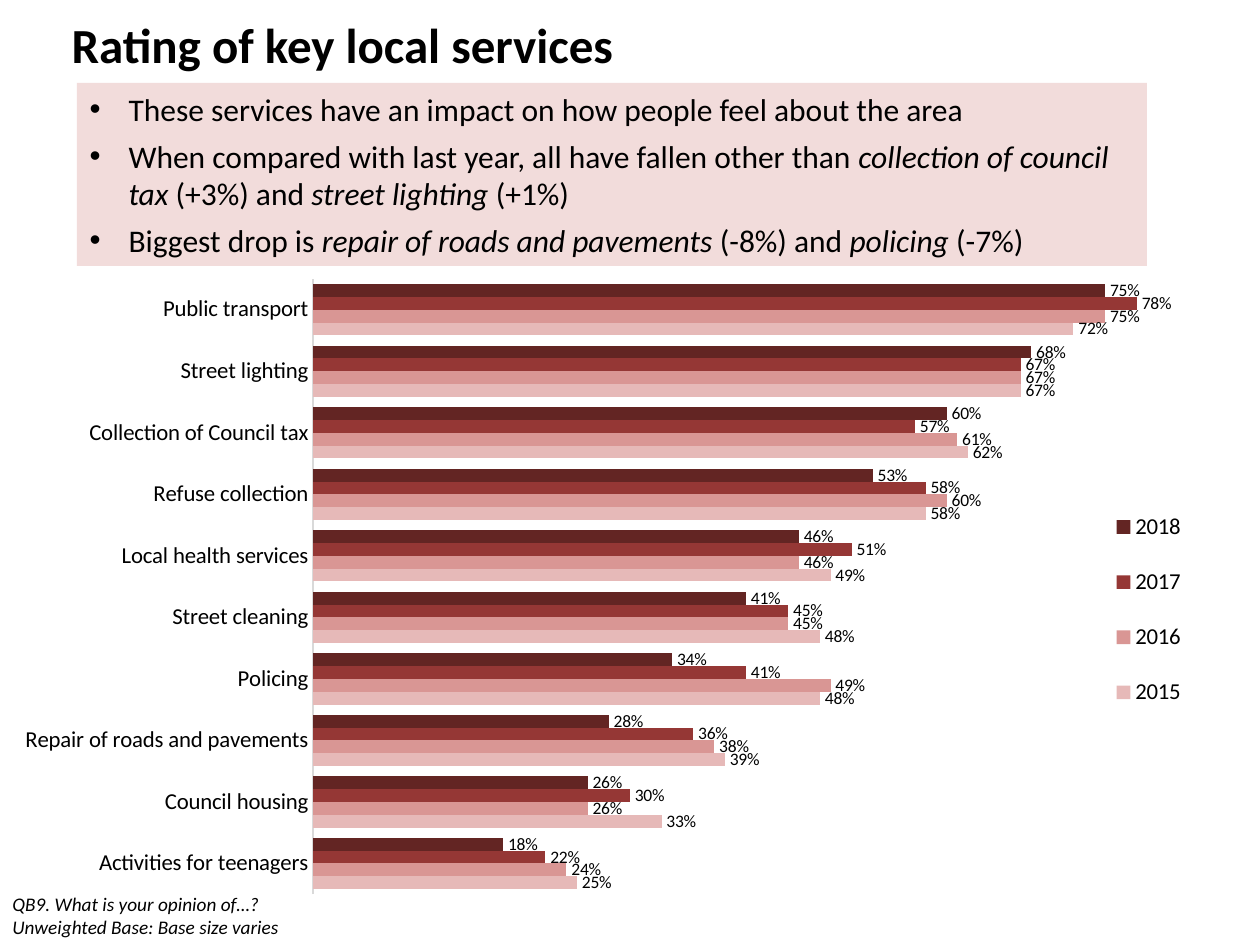
import pptx
import pptx.chart.data
import pptx.dml.color
import pptx.enum.chart
import pptx.enum.text
import pptx.oxml
import pptx.util
from pptx.oxml.ns import qn

RGB = pptx.dml.color.RGBColor
BLACK = RGB(0, 0, 0)
PINK = RGB(0xF2, 0xDC, 0xDB)
GREY = RGB(0xD9, 0xD9, 0xD9)
SCALE = 914400 / 126
FACE = "Calibri"

# Odd parts of each point are italic
POINTS = [
    ["These services have an impact on how people feel about the area"],
    ["When compared with last year, all have fallen other than ",
     "collection of council tax", " (+3%) and ", "street lighting", " (+1%)"],
    ["Biggest drop is ", "repair of roads and pavements",
     " (-8%) and ", "policing", " (-7%)"],
]
CATS = ["Activities for teenagers", "Council housing",
        "Repair of roads and pavements", "Policing", "Street cleaning",
        "Local health services", "Refuse collection",
        "Collection of Council tax", "Street lighting", "Public transport"]
SERIES = [
    ("2015", RGB(0xE6, 0xB9, 0xB8), [25, 33, 39, 48, 48, 49, 58, 62, 67, 72]),
    ("2016", RGB(0xD9, 0x96, 0x94), [24, 26, 38, 49, 45, 46, 60, 61, 67, 75]),
    ("2017", RGB(0x95, 0x37, 0x35), [22, 30, 36, 41, 45, 51, 58, 57, 67, 78]),
    ("2018", RGB(0x63, 0x25, 0x23), [18, 26, 28, 34, 41, 46, 53, 60, 68, 75]),
]


def px(num):
    return pptx.util.Emu(round(num * SCALE))


def place(shape, *box):
    shape.left, shape.top, shape.width, shape.height = map(px, box)


def style(font, size, bold=False, italic=False, face=FACE):
    font.name, font.size = face, pptx.util.Pt(size)
    font.bold, font.italic = bold, italic
    font.color.rgb = BLACK


def add_title(slide):
    title = slide.shapes.title
    place(title, 59, 4, 1090, 79)
    frame = title.text_frame
    frame.text = "Rating of key local services"
    frame.auto_size = pptx.enum.text.MSO_AUTO_SIZE.NONE
    frame.vertical_anchor = pptx.enum.text.MSO_ANCHOR.MIDDLE
    para = frame.paragraphs[0]
    para.alignment = pptx.enum.text.PP_ALIGN.LEFT
    style(para.runs[0].font, 28, bold=True)


def add_points(slide):
    body = slide.placeholders[1]
    place(body, 77, 83, 1070, 183)
    body.fill.solid()
    body.fill.fore_color.rgb = PINK
    frame = body.text_frame
    frame.auto_size = pptx.enum.text.MSO_AUTO_SIZE.NONE
    frame.vertical_anchor = pptx.enum.text.MSO_ANCHOR.MIDDLE
    for num, parts in enumerate(POINTS):
        para = frame.add_paragraph() if num else frame.paragraphs[0]
        props = para._p.get_or_add_pPr()
        props.set("marL", str(px(39)))
        props.set("indent", str(-px(39)))
        para.space_before = pptx.util.Pt(5 if num else 0)
        for spot, part in enumerate(parts):
            run = para.add_run()
            run.text = part
            style(run.font, 18, italic=spot % 2 == 1)


def add_note(slide):
    frame = slide.shapes.add_textbox(
        px(0), px(886), px(905), px(59)).text_frame
    frame.word_wrap = True
    frame.text = ("QB9. What is your opinion of…?\n"
                  "Unweighted Base: Base size varies")
    for para in frame.paragraphs:
        style(para.runs[0].font, 11, italic=True)


def set_layout(node, spots, inner=False):
    """Fix the place of a plot area or legend as shares of the chart."""
    old = node.find(qn("c:layout"))
    if old is not None:
        node.remove(old)
    target = '<c:layoutTarget val="inner"/>' if inner else ""
    modes = "".join(f'<c:{key}Mode val="edge"/>' for key in "xy")
    vals = "".join(f'<c:{key} val="{val}"/>' for key, val in zip("xywh", spots))
    layout = pptx.oxml.parse_xml(
        '<c:layout xmlns:c="http://schemas.openxmlformats.org/drawingml/2006/'
        f'chart"><c:manualLayout>{target}{modes}{vals}</c:manualLayout>'
        '</c:layout>')
    node.insert(0 if inner else 1, layout)


def add_bars(slide):
    data = pptx.chart.data.CategoryChartData(number_format="0%")
    data.categories = CATS
    for name, _, vals in SERIES:
        data.add_series(name, [val / 100 for val in vals])
    chart = slide.shapes.add_chart(
        pptx.enum.chart.XL_CHART_TYPE.BAR_CLUSTERED,
        px(0), px(266), px(1290), px(689), data).chart
    chart.has_title = False
    style(chart.font, 10, face="Arial")
    plot = chart.plots[0]
    plot.gap_width, plot.overlap = 80, 0
    plot.vary_by_categories = False
    for series, (_, color, _) in zip(plot.series, SERIES):
        series.format.fill.solid()
        series.format.fill.fore_color.rgb = color
        labels = series.data_labels
        labels.show_value = True
        labels.number_format = "0%"
        labels.number_format_is_linked = False
        labels.position = pptx.enum.chart.XL_LABEL_POSITION.OUTSIDE_END
        style(labels.font, 10)
    set_axes(chart)
    set_legend(chart)
    area = chart._chartSpace.chart.plotArea
    set_layout(area, (0.2426, 0.019, 0.737, 0.893), inner=True)


def set_axes(chart):
    cats, vals = chart.category_axis, chart.value_axis
    cats.major_tick_mark = pptx.enum.chart.XL_TICK_MARK.NONE
    cats.format.line.color.rgb = GREY
    cats.format.line.width = pptx.util.Pt(0.75)
    style(cats.tick_labels.font, 13)
    vals.minimum_scale, vals.maximum_scale = 0, 0.9
    vals.has_major_gridlines = False
    vals.visible = False


def set_legend(chart):
    chart.has_legend = True
    legend = chart.legend
    legend.position = pptx.enum.chart.XL_LEGEND_POSITION.BOTTOM
    legend.include_in_layout = False
    style(legend.font, 13)
    set_layout(legend._element, (0.858, 0.319, 0.065, 0.36))


def main():
    deck = pptx.Presentation()
    deck.slide_width, deck.slide_height = px(1260), px(945)
    slide = deck.slides.add_slide(deck.slide_layouts[1])
    add_title(slide)
    add_note(slide)
    add_points(slide)
    add_bars(slide)
    deck.save("out.pptx")


if __name__ == "__main__":
    main()
